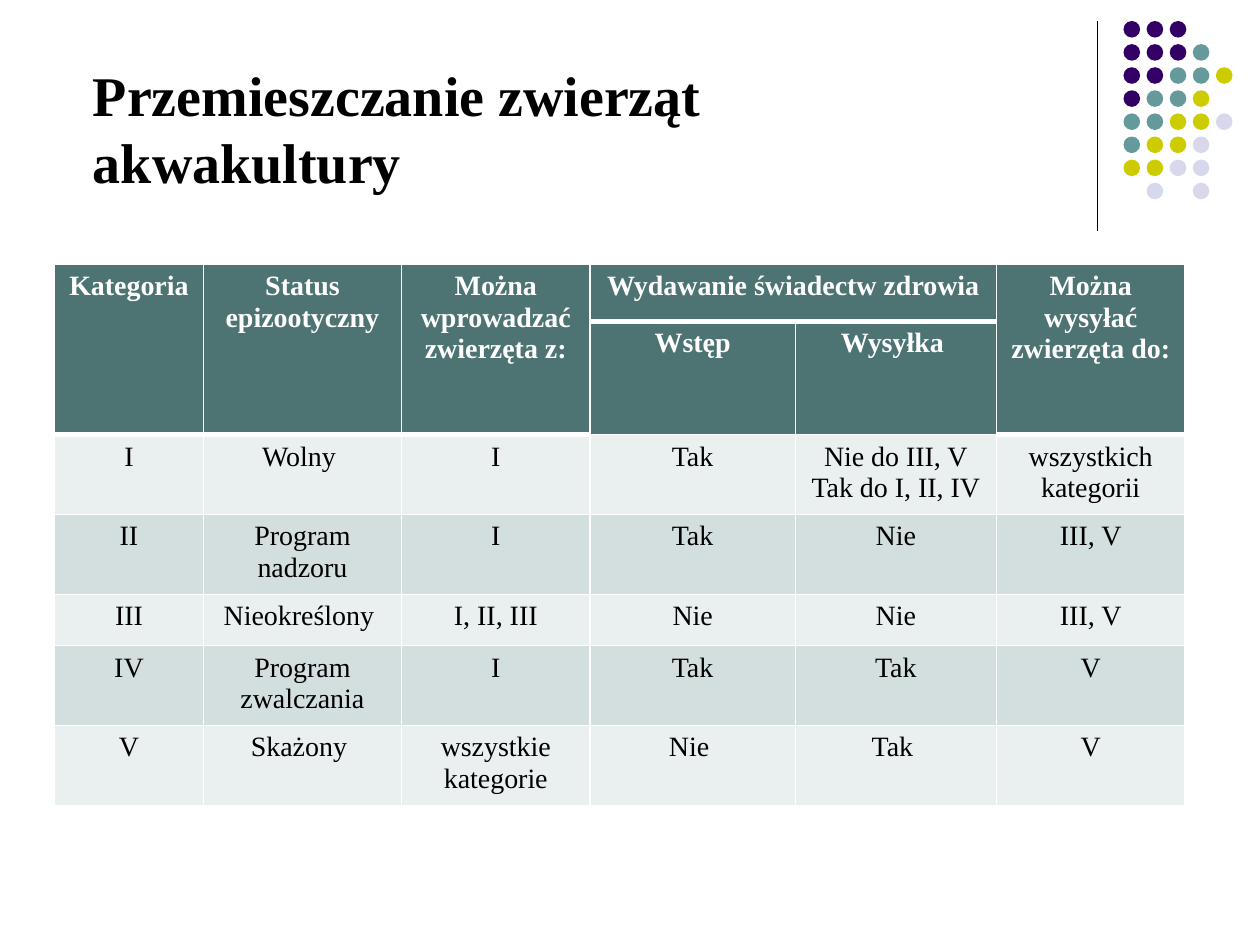
from lxml import etree
from pptx import Presentation
from pptx.dml.color import RGBColor
from pptx.enum.shapes import MSO_CONNECTOR, MSO_SHAPE
from pptx.enum.text import MSO_ANCHOR, PP_ALIGN
from pptx.oxml.ns import qn
from pptx.util import Pt

STRAIGHT = MSO_CONNECTOR.STRAIGHT
OVAL = MSO_SHAPE.OVAL
BOTTOM = MSO_ANCHOR.BOTTOM
CENTER = PP_ALIGN.CENTER

FONT = "Times New Roman"
BLACK, WHITE = "000000", "FFFFFF"
HEADER_FILL = "4D7373"
BAND_FILLS = ("EAEFEF", "D3DEDE")

# One letter per dot, a space for a gap
DOT_COLORS = {"P": "330066", "T": "669999", "Y": "CCCC00", "L": "D8D8EC"}
DOT_ROWS = ("PPP", "PPPT", "PPTTY", "PTTY", "TTYYL", "TYYL", "YYLL", " L L")

COLUMN_WIDTHS = (85, 113.3, 107.7, 117.3, 115, 107.7)
ROW_HEIGHTS = (32.4, 64.6, 45.7, 45.7, 29.2, 45.7, 45.4)
HEADER_ROWS = 2
TABLE_ROWS = (
    ("Kategoria", "Status epizootyczny", "Można wprowadzać zwierzęta z:",
     "Wydawanie świadectw zdrowia", "", "Można wysyłać zwierzęta do:"),
    ("", "", "", "Wstęp", "Wysyłka ", ""),
    ("I", "Wolny ", "I", "Tak", "Nie do III, V\nTak do I, II, IV",
     "wszystkich kategorii"),
    ("II", "Program nadzoru", "I", "Tak", "Nie", "III, V"),
    ("III", "Nieokreślony ", "I, II, III", "Nie", "Nie", "III, V"),
    ("IV", "Program zwalczania", "I", "Tak", "Tak", "V"),
    ("V", "Skażony ", "wszystkie kategorie", "Nie ", "Tak ", "V"),
)
TALL_HEADERS = (0, 1, 2, 5)
CERTIFICATE_COLUMNS = (3, 4)


def color(hex_string):
    return RGBColor.from_string(hex_string)


def add_run(paragraph, text, size, text_color, bold):
    run = paragraph.add_run()
    run.text = text
    run.font.name = FONT
    run.font.size = Pt(size)
    run.font.bold = bold
    run.font.color.rgb = color(text_color)


def set_borders(cell, bottom_width):
    properties = cell._tc.get_or_add_tcPr()
    for side, width in (("L", 1), ("R", 1), ("T", 1), ("B", bottom_width)):
        line = etree.SubElement(properties, qn(f"a:ln{side}"), w=str(Pt(width)))
        fill = etree.SubElement(line, qn("a:solidFill"))
        etree.SubElement(fill, qn("a:srgbClr"), val=WHITE)


def add_ornament(slide, left, top, height, dots_left, pitch, diameter):
    # Vertical rule
    rule = slide.shapes.add_connector(
        STRAIGHT, Pt(left), Pt(top), Pt(left), Pt(top + height))
    rule.line.color.rgb = color(BLACK)
    rule.line.width = Pt(0.75)
    etree.SubElement(rule._element.spPr, qn("a:effectLst"))

    # Dot grid
    for row, letters in enumerate(DOT_ROWS):
        for column, letter in enumerate(letters):
            if letter == " ":
                continue
            dot = slide.shapes.add_shape(
                OVAL, Pt(dots_left + column * pitch), Pt(top + row * pitch),
                Pt(diameter), Pt(diameter))
            dot.shadow.inherit = False
            dot.fill.solid()
            dot.fill.fore_color.rgb = color(DOT_COLORS[letter])
            dot.line.fill.background()


def add_title(slide, left, top, width, height):
    box = slide.shapes.add_textbox(Pt(left), Pt(top), Pt(width), Pt(height))
    frame = box.text_frame
    frame.word_wrap = True
    frame.vertical_anchor = BOTTOM
    paragraph = frame.paragraphs[0]
    paragraph.line_spacing = Pt(38.4)
    add_run(paragraph, "Przemieszczanie zwierząt akwakultury", 32, BLACK, True)


def fill_cell(cell, text, row, column):
    header = row < HEADER_ROWS
    thick = header and (row == 0 or column in TALL_HEADERS)
    set_borders(cell, 3 if thick else 1)
    cell.fill.solid()
    band = BAND_FILLS[(row - HEADER_ROWS) % 2]
    cell.fill.fore_color.rgb = color(HEADER_FILL if header else band)
    if not text:
        return
    frame = cell.text_frame
    for index, line in enumerate(text.split("\n")):
        paragraph = frame.add_paragraph() if index else frame.paragraphs[0]
        paragraph.alignment = CENTER
        add_run(paragraph, line, 16, WHITE if header else BLACK, header)


def add_category_table(slide, left, top):
    table = slide.shapes.add_table(
        len(ROW_HEIGHTS), len(COLUMN_WIDTHS), Pt(left), Pt(top),
        Pt(sum(COLUMN_WIDTHS)), Pt(sum(ROW_HEIGHTS))).table
    for column, width in zip(table.columns, COLUMN_WIDTHS):
        column.width = Pt(width)
    for row, height in zip(table.rows, ROW_HEIGHTS):
        row.height = Pt(height)

    # Merged header cells
    for column in TALL_HEADERS:
        table.cell(0, column).merge(table.cell(1, column))
    first, last = CERTIFICATE_COLUMNS
    table.cell(0, first).merge(table.cell(0, last))

    # Cell contents
    for row, texts in enumerate(TABLE_ROWS):
        for column, text in enumerate(texts):
            fill_cell(table.cell(row, column), text, row, column)


def main():
    presentation = Presentation()
    presentation.slide_width = Pt(720)
    presentation.slide_height = Pt(540)
    slide = presentation.slides.add_slide(presentation.slide_layouts[6])
    add_ornament(slide, left=627, top=12, height=120,
                 dots_left=642, pitch=13.2, diameter=9.5)
    add_title(slide, left=46, top=30, width=450, height=85)
    add_category_table(slide, left=31.2, top=151.2)
    presentation.save("out.pptx")


if __name__ == "__main__":
    main()
